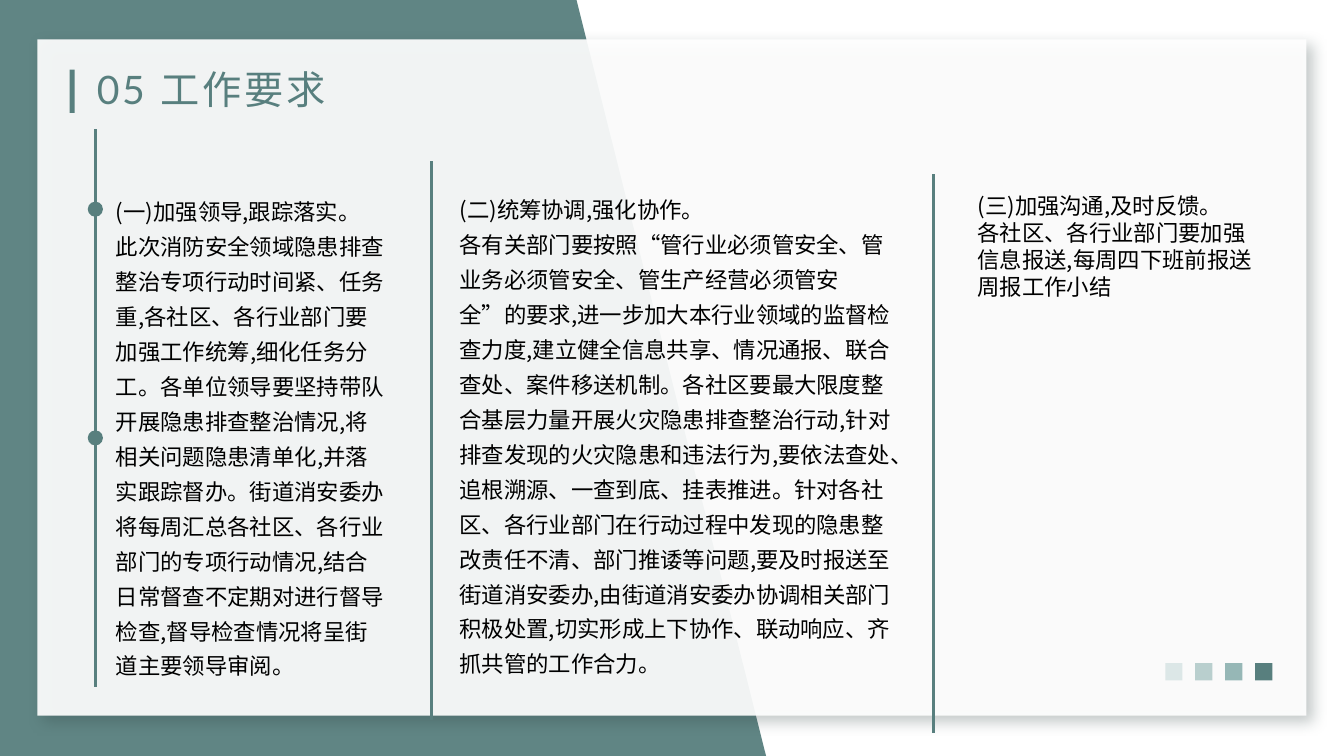
"""Build the work requirements slide; lengths are percentages of the slide's size."""
from typing import NamedTuple

from lxml import etree
from pptx import Presentation
from pptx.dml.color import RGBColor
from pptx.enum.shapes import MSO_CONNECTOR, MSO_SHAPE
from pptx.enum.text import MSO_ANCHOR, MSO_AUTO_SIZE, PP_ALIGN
from pptx.oxml.ns import qn
from pptx.util import Emu, Inches, Pt

RECT, OVAL, STRAIGHT = MSO_SHAPE.RECTANGLE, MSO_SHAPE.OVAL, MSO_CONNECTOR.STRAIGHT
LEFT, TOP, MIDDLE = PP_ALIGN.LEFT, MSO_ANCHOR.TOP, MSO_ANCHOR.MIDDLE
GROW = MSO_AUTO_SIZE.SHAPE_TO_FIT_TEXT
WHITE, BLACK = RGBColor(255, 255, 255), RGBColor(0, 0, 0)
TEAL, SHADOW = RGBColor(0x58, 0x7F, 0x7E), RGBColor(0x2C, 0x40, 0x3F)
SQUARE_COLORS = (RGBColor(0xDC, 0xE7, 0xE7), RGBColor(0xB9, 0xCF, 0xCE),
                 RGBColor(0x96, 0xB7, 0xB6), TEAL)
CJK, LATIN = "Noto Sans CJK SC", "Lato"
WIDTH, HEIGHT = Inches(13.333), Inches(7.5)


class Box(NamedTuple):
    """A rectangle in shares of the slide."""
    x: float
    y: float
    w: float
    h: float


class Rule(NamedTuple):
    """A vertical line."""
    x: float
    top: float
    bottom: float


class Column(NamedTuple):
    """A heading and its text."""
    box: Box
    heading: str
    body: str
    spacing: float = 1.3
    inset: tuple[float, float] = (0, 0)


BACKDROPS = (
    (((22.8, 0), (100, 0), (100, 100), (22.8, 100)), WHITE),
    (((0, 0), (42.9, 0), (57, 100), (0, 100)), TEAL),
)
CARD = Box(2.78, 5.2, 94.43, 89.47)
TITLE_BAR = Box(5.18, 9.2, 0.38, 5.73)
TITLE_BOX = Box(6.45, 8, 39.45, 7.6)
SQUARE, SQUARE_STEP = Box(86.7, 87.73, 1.28, 2.27), 2.23
DOTS = (Box(6.53, 26.67, 1.13, 2), Box(6.53, 56.93, 1.13, 2))
RULES = (Rule(7.13, 17.07, 90.93), Rule(32.1, 21.33, 95.2), Rule(69.45, 23.07, 96.93))
COLUMNS = (
    Column(Box(8.63, 25.2, 20.18, 65.33), "(一)加强领导,跟踪落实。",
           "此次消防安全领域隐患排查整治专项行动时间紧、任务重,各社区、各行业部门要"
           "加强工作统筹,细化任务分工。各单位领导要坚持带队开展隐患排查整治情况,将"
           "相关问题隐患清单化,并落实跟踪督办。街道消安委办将每周汇总各社区、各行业"
           "部门的专项行动情况,结合日常督查不定期对进行督导检查,督导检查情况将呈街"
           "道主要领导审阅。"),
    Column(Box(34.2, 24.93, 33, 65.33), "(二)统筹协调,强化协作。",
           "各有关部门要按照“管行业必须管安全、管业务必须管安全、管生产经营必须管安"
           "全”的要求,进一步加大本行业领域的监督检查力度,建立健全信息共享、情况通报、联合"
           "查处、案件移送机制。各社区要最大限度整合基层力量开展火灾隐患排查整治行动,针对"
           "排查发现的火灾隐患和违法行为,要依法查处、追根溯源、一查到底、挂表推进。针对各社"
           "区、各行业部门在行动过程中发现的隐患整改责任不清、部门推诿等问题,要及时报送至"
           "街道消安委办,由街道消安委办协调相关部门积极处置,切实形成上下协作、联动响应、齐"
           "抓共管的工作合力。"),
    Column(Box(72, 24.8, 22.28, 15.73), "(三)加强沟通,及时反馈。",
           "各社区、各行业部门要加强信息报送,每周四下班前报送周报工作小结",
           spacing=1, inset=(0.1, 0.05)),
)


def across(share: float) -> Emu:
    """Return a share of the slide's width."""
    return Emu(round(WIDTH * share / 100))


def down(share: float) -> Emu:
    """Return a share of the slide's height."""
    return Emu(round(HEIGHT * share / 100))


def place(box: Box) -> tuple[Emu, Emu, Emu, Emu]:
    """Return left, top, width and height."""
    return across(box.x), down(box.y), across(box.w), down(box.h)


def paint(sp, color: RGBColor, opacity: int = 100) -> None:
    """Give a shape a plain fill without line or shadow."""
    sp.shadow.inherit = False
    sp.fill.solid()
    sp.fill.fore_color.rgb = color
    sp.line.fill.background()
    if opacity < 100:
        clr = sp._element.spPr.find(qn("a:solidFill"))[0]
        etree.SubElement(clr, qn("a:alpha"), val=str(opacity * 1000))


def add_filled(slide, kind, box: Box, color: RGBColor, opacity: int = 100):
    """Add a filled preset shape."""
    sp = slide.shapes.add_shape(kind, *place(box))
    paint(sp, color, opacity)
    return sp


def add_polygon(slide, points, color: RGBColor, opacity: int) -> None:
    """Add a filled outline."""
    corners = [(across(x), down(y)) for x, y in points]
    builder = slide.shapes.build_freeform(*corners[0], scale=1.0)
    builder.add_line_segments(corners[1:], close=True)
    paint(builder.convert_to_shape(), color, opacity)


def add_card_shadow(sp) -> None:
    """Cast a soft shadow to the lower right."""
    effects = sp._element.spPr.find(qn("a:effectLst"))
    outer = etree.SubElement(effects, qn("a:outerShdw"), blurRad=str(Pt(10)),
                             dist=str(Pt(6)), dir=str(45 * 60000), algn="tl",
                             rotWithShape="0")
    clr = etree.SubElement(outer, qn("a:srgbClr"), val=str(SHADOW))
    etree.SubElement(clr, qn("a:alpha"), val="30000")


def add_rule(slide, rule: Rule) -> None:
    """Add a vertical line."""
    x = across(rule.x)
    line = slide.shapes.add_connector(STRAIGHT, x, down(rule.top), x, down(rule.bottom))
    line.line.color.rgb = TEAL
    line.line.width = Pt(2)
    etree.SubElement(line._element.spPr, qn("a:effectLst"))


def write(sp, *lines: str, size: float = 16, font: str = CJK, color: RGBColor = BLACK,
          spacing: float = 1, tracking: float = 0, anchor=TOP,
          inset: tuple[float, float] = (0.1, 0.05)) -> None:
    """Fill a shape with paragraphs of one format."""
    tf = sp.text_frame
    tf.word_wrap, tf.auto_size, tf.vertical_anchor = True, GROW, anchor
    tf.margin_left = tf.margin_right = Inches(inset[0])
    tf.margin_top = tf.margin_bottom = Inches(inset[1])
    for i, text in enumerate(lines):
        p = tf.add_paragraph() if i else tf.paragraphs[0]
        p.alignment, p.line_spacing = LEFT, spacing
        r = p.add_run()
        r.text = text
        r.font.size, r.font.name, r.font.color.rgb = Pt(size), font, color
        rpr = r.font._element
        etree.SubElement(rpr, qn("a:ea"), typeface=CJK)
        if tracking:
            rpr.set("spc", str(round(tracking * 100)))


def main() -> None:
    """Draw the slide and save it."""
    prs = Presentation()
    prs.slide_width, prs.slide_height = WIDTH, HEIGHT
    slide = prs.slides.add_slide(prs.slide_layouts[5])
    for points, color in BACKDROPS:
        add_polygon(slide, points, color, 95)
    add_card_shadow(add_filled(slide, RECT, CARD, WHITE, 92))
    for i, color in enumerate(SQUARE_COLORS):
        add_filled(slide, RECT, SQUARE._replace(x=SQUARE.x + i * SQUARE_STEP), color)
    add_filled(slide, RECT, TITLE_BAR, TEAL)
    for rule in RULES:
        add_rule(slide, rule)
    for dot in DOTS:
        add_filled(slide, OVAL, dot, TEAL)
    for column in COLUMNS:
        write(slide.shapes.add_textbox(*place(column.box)), column.heading, column.body,
              spacing=column.spacing, inset=column.inset)
    title = slide.shapes.title
    title.left, title.top, title.width, title.height = place(TITLE_BOX)
    write(title, "05 工作要求", size=28, font=LATIN, color=TEAL, tracking=2, anchor=MIDDLE)
    slide.shapes._spTree.append(title._element)
    prs.save("out.pptx")


if __name__ == "__main__":
    main()
